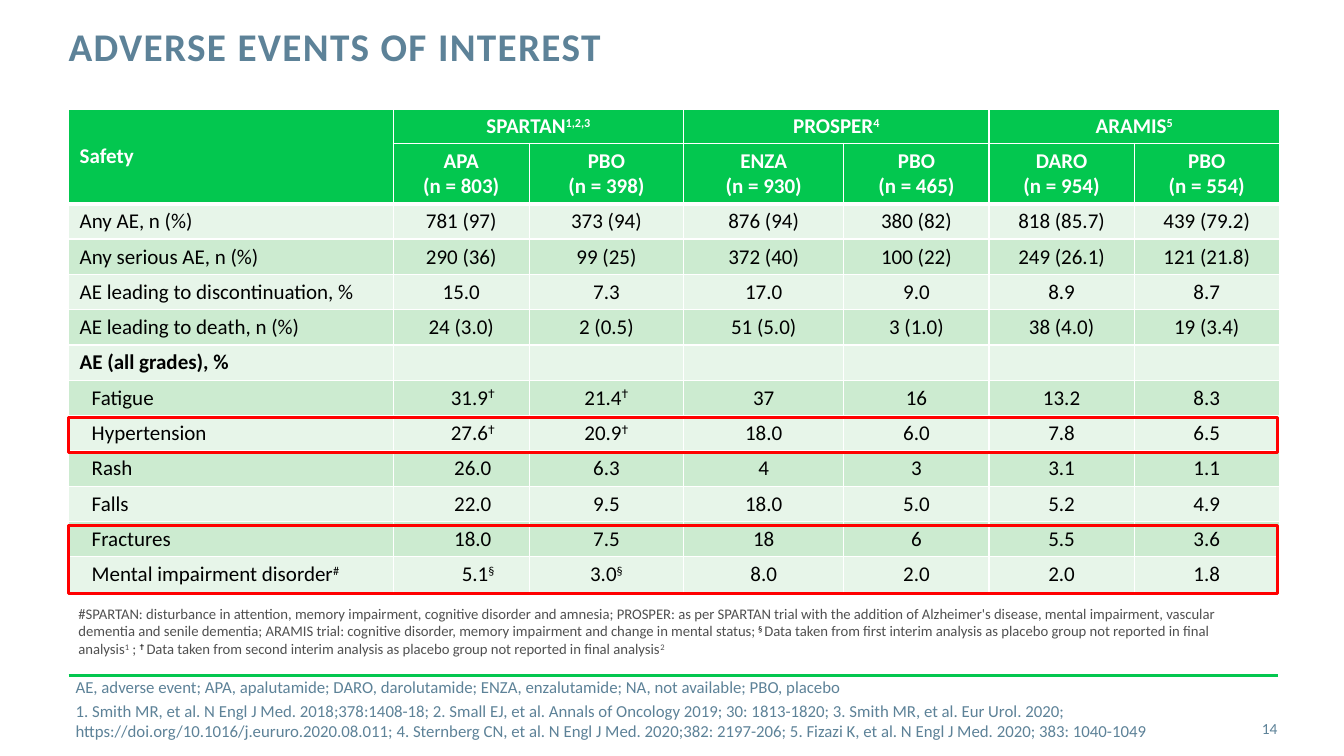
from lxml.etree import SubElement
from pptx import Presentation
from pptx.dml.color import RGBColor
from pptx.enum.shapes import MSO_CONNECTOR, MSO_SHAPE
from pptx.enum.text import MSO_ANCHOR, MSO_AUTO_SIZE, PP_ALIGN
from pptx.oxml.ns import qn
from pptx.util import Inches, Pt

GREEN, SLATE, GREY, RED = "03C74F", "5D8298", "505050", "FF0000"
BLACK, WHITE = "000000", "FFFFFF"
BAND_FILLS = ["E7F5E9", "CCEBD0"]
LEFT, WIDTH = 0.68, 11.99

COLUMN_WIDTHS = [3.22, 1.35, 1.53, 1.59, 1.44, 1.44, 1.44]
ROW_HEIGHTS = [0.33, 0.6] + [0.35] * 11
SECTION_ROW = 6
ROWS = [
    ["Safety", "SPARTAN^1,2,3", "", "PROSPER^4", "", "ARAMIS^5", ""],
    ["", "APA\n(n = 803)", "PBO\n(n = 398)", "ENZA\n(n = 930)", "PBO\n(n = 465)",
     "DARO\n(n = 954)", "PBO\n(n = 554)"],
    ["Any AE, n (%)", "781 (97)", "373 (94)", "876 (94)", "380 (82)", "818 (85.7)", "439 (79.2)"],
    ["Any serious AE, n (%)", "290 (36)", "99 (25)", "372 (40)", "100 (22)", "249 (26.1)", "121 (21.8)"],
    ["AE leading to discontinuation, %", "15.0", "7.3", "17.0", "9.0", "8.9", "8.7"],
    ["AE leading to death, n (%)", "24 (3.0)", "2 (0.5)", "51 (5.0)", "3 (1.0)", "38 (4.0)", "19 (3.4)"],
    ["AE (all grades), %", "", "", "", "", "", ""],
    ["Fatigue", "\t31.9^†", "21.4^†", "37", "16", "13.2", "8.3"],
    ["Hypertension", "\t27.6^†", "20.9^†", "18.0", "6.0", "7.8", "6.5"],
    ["Rash", "\t26.0", "6.3", "4", "3", "3.1", "1.1"],
    ["Falls", "\t22.0", "9.5", "18.0", "5.0", "5.2", "4.9"],
    ["Fractures", "\t18.0", "7.5", "18", "6", "5.5", "3.6"],
    ["Mental impairment disorder^#", "\t5.1^§", "3.0^§", "8.0", "2.0", "2.0", "1.8"],
]
FOOTNOTE = (
    "#SPARTAN: disturbance in attention, memory impairment, cognitive disorder and amnesia; "
    "PROSPER: as per SPARTAN trial with the addition of Alzheimer's disease, mental impairment, "
    "vascular dementia and senile dementia; ARAMIS trial: cognitive disorder, memory impairment "
    "and change in mental status;^ § ^Data taken from first interim analysis as placebo group not "
    "reported in final analysis^1^ ; ^† ^Data taken from second interim analysis as placebo group "
    "not reported in final analysis^2"
)
REFERENCES = (
    "AE, adverse event; APA, apalutamide; DARO, darolutamide; ENZA, enzalutamide; "
    "NA, not available; PBO, placebo\n"
    "1. Smith MR, et al. N Engl J Med. 2018;378:1408-18; 2. Small EJ, et al. Annals of Oncology "
    "2019; 30: 1813-1820; 3. Smith MR, et al. Eur Urol. 2020; "
    "https://doi.org/10.1016/j.eururo.2020.08.011; 4. Sternberg CN, et al. N Engl J Med. "
    "2020;382: 2197-206; 5. Fizazi K, et al. N Engl J Med. 2020; 383: 1040-1049"
)


def color(value):
    return RGBColor.from_string(value)


class SlideBuilder:
    font = "Calibri"
    symbol_font = "Roboto"

    def __init__(self, slide):
        self.slide = slide

    def fill_text(self, text_frame, text, size, ink, bold=False, align=PP_ALIGN.LEFT, gap=0):
        for index, line in enumerate(text.split("\n")):
            paragraph = text_frame.add_paragraph() if index else text_frame.paragraphs[0]
            paragraph.alignment = align
            paragraph.space_before = Pt(gap if index else 0)
            for position, piece in enumerate(line.split("^")):
                run = paragraph.add_run()
                run.text = piece
                font = run.font
                font.size, font.bold = Pt(size), bold
                raised = position % 2 == 1
                symbol = piece.strip() in ("§", "†")
                font.name = self.symbol_font if "†" in piece else self.font
                font.color.rgb = color(BLACK if symbol else ink)
                if raised:
                    run._r.get_or_add_rPr().set("baseline", "30000")

    def title(self, text):
        shape = self.slide.shapes.title
        shape.left, shape.top = Inches(LEFT), Inches(0.27)
        shape.width, shape.height = Inches(9.56), Inches(0.88)
        self.frame(shape.text_frame, 0, 0, MSO_ANCHOR.TOP)
        shape.text_frame.auto_size = MSO_AUTO_SIZE.NONE
        self.fill_text(shape.text_frame, text, 28, SLATE, bold=True)
        paragraph = shape.text_frame.paragraphs[0]
        paragraph.line_spacing = Pt(30)
        paragraph.runs[0]._r.get_or_add_rPr().set("spc", "100")

    def frame(self, text_frame, side, edge, anchor):
        text_frame.margin_left = text_frame.margin_right = Inches(side)
        text_frame.margin_top = text_frame.margin_bottom = Inches(edge)
        text_frame.vertical_anchor = anchor
        text_frame.word_wrap = True

    def text(self, box, text, size, ink, side=0, edge=0, anchor=MSO_ANCHOR.MIDDLE, **style):
        shape = self.slide.shapes.add_textbox(*map(Inches, box))
        self.frame(shape.text_frame, side, edge, anchor)
        self.fill_text(shape.text_frame, text, size, ink, **style)

    def rule(self, left, right, top):
        line = self.slide.shapes.add_connector(
            MSO_CONNECTOR.STRAIGHT, Inches(left), Inches(top), Inches(right), Inches(top))
        line.line.color.rgb = color(GREEN)
        line.line.width = Pt(2)
        SubElement(line._element.spPr, qn("a:effectLst"))

    def highlight(self, top, height):
        shape = self.slide.shapes.add_shape(
            MSO_SHAPE.RECTANGLE, Inches(LEFT), Inches(top), Inches(WIDTH), Inches(height))
        shape.shadow.inherit = False
        shape.fill.background()
        shape.line.color.rgb = color(RED)
        shape.line.width = Pt(2)

    def borders(self, cell, row):
        properties = cell._tc.get_or_add_tcPr()
        widths = {"lnL": 1, "lnR": 1, "lnT": 3 if row == 2 else 1, "lnB": 3 if row == 1 else 1}
        for side, width in widths.items():
            line = SubElement(properties, qn(f"a:{side}"), w=str(Pt(width)))
            fill = SubElement(line, qn("a:solidFill"))
            SubElement(fill, qn("a:srgbClr"), val=WHITE)

    def cell(self, cell, row, column, text):
        header = row < 2
        self.borders(cell, row)
        cell.fill.solid()
        cell.fill.fore_color.rgb = color(GREEN if header else BAND_FILLS[row % 2])
        cell.margin_left = cell.margin_right = Inches(0.11)
        cell.margin_top = cell.margin_bottom = Inches(0.05 if row or not column else 0.04)
        cell.vertical_anchor = MSO_ANCHOR.MIDDLE
        paragraph = cell.text_frame.paragraphs[0]
        if not text:
            SubElement(paragraph._p, qn("a:endParaRPr"), sz="1500")
            return
        self.fill_text(cell.text_frame, text, 15, WHITE if header else BLACK,
                       bold=header or row == SECTION_ROW,
                       align=PP_ALIGN.CENTER if column else PP_ALIGN.LEFT)
        properties = paragraph._p.get_or_add_pPr()
        if row > SECTION_ROW and column == 0:
            properties.set("marL", str(Inches(0.12)))
        if text.startswith("\t"):
            tabs = SubElement(properties, qn("a:tabLst"))
            SubElement(tabs, qn("a:tab"), pos=str(Inches(0.44)), algn="dec")

    def table(self, top):
        shape = self.slide.shapes.add_table(
            len(ROWS), len(COLUMN_WIDTHS), Inches(LEFT), Inches(top),
            Inches(WIDTH), Inches(sum(ROW_HEIGHTS)))
        table = shape.table
        table.first_row = table.horz_banding = False
        for column, width in zip(table.columns, COLUMN_WIDTHS):
            column.width = Inches(width)
        for row, height in zip(table.rows, ROW_HEIGHTS):
            row.height = Inches(height)
        for row, texts in enumerate(ROWS):
            for column, text in enumerate(texts):
                self.cell(table.cell(row, column), row, column, text)
        table.cell(0, 0).merge(table.cell(1, 0))
        for column in (1, 3, 5):
            table.cell(0, column).merge(table.cell(0, column + 1))


def main():
    presentation = Presentation()
    presentation.slide_width, presentation.slide_height = Inches(13.33), Inches(7.5)
    builder = SlideBuilder(presentation.slides.add_slide(presentation.slide_layouts[5]))
    builder.rule(LEFT, 12.68, 6.7)
    builder.title("ADVERSE EVENTS OF INTEREST")
    builder.text((0.75, 6.83, 11.67, 0.4), REFERENCES, 12, SLATE, gap=3)
    builder.table(1.09)
    builder.highlight(4.14, 0.35)
    builder.highlight(5.21, 0.68)
    builder.text((11.81, 7.03, 0.86, 0.4), "14", 11, SLATE, align=PP_ALIGN.RIGHT)
    builder.text((LEFT, 5.95, WIDTH, 0.63), FOOTNOTE, 10.5, GREY,
                 side=0.1, edge=0.05, anchor=MSO_ANCHOR.TOP)
    presentation.save("out.pptx")


if __name__ == "__main__":
    main()
